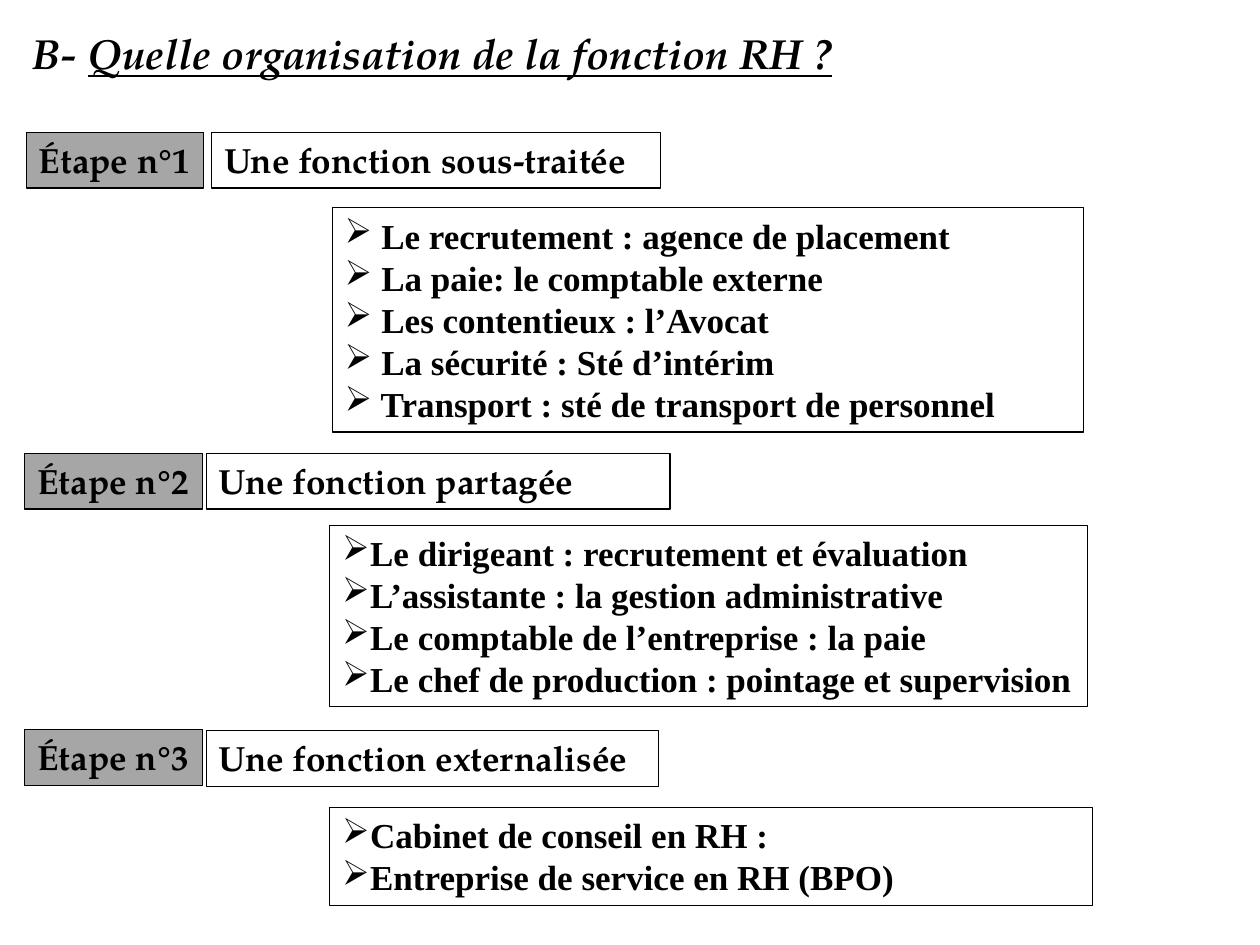
from dataclasses import dataclass

import pptx
import pptx.dml.color
import pptx.enum.shapes
import pptx.enum.text
import pptx.oxml.ns
import pptx.util
from lxml import etree
from pptx.util import Cm


@dataclass(frozen=True)
class Theme:
    ink: str = "000000"
    paper: str = "FFFFFF"
    label: str = "A6A6A6"
    heading_font: str = "TeX Gyre Pagella"
    body_font: str = "Times New Roman"
    title_size: int = 24
    text_size: int = 20
    line_width: float = 0.75


THEME = Theme()
HEADING_HEIGHT = Cm(1.12)
LABEL_WIDTH = Cm(3.58)

STEPS = [
    {
        "label": ("Étape n°1", Cm(0.53), Cm(2.67)),
        "heading": ("Une fonction sous-traitée", Cm(4.27), Cm(2.67), Cm(9.04)),
        "box": (Cm(6.7), Cm(4.19), Cm(15.14), Cm(4.52)),
        "items": [
            " Le recrutement : agence de placement",
            " La paie: le comptable externe",
            " Les contentieux : l’Avocat",
            " La sécurité : Sté d’intérim",
            " Transport : sté de transport de personnel",
        ],
    },
    {
        "label": ("Étape n°2", Cm(0.5), Cm(9.14)),
        "heading": ("Une fonction partagée", Cm(4.16), Cm(9.14), Cm(9.35)),
        "box": (Cm(6.65), Cm(10.59), Cm(15.28), Cm(3.66)),
        "items": [
            "Le dirigeant : recrutement et évaluation",
            "L’assistante : la gestion administrative",
            "Le comptable de l’entreprise : la paie",
            "Le chef de production : pointage et supervision",
        ],
    },
    {
        "label": ("Étape n°3", Cm(0.5), Cm(14.71)),
        "heading": ("Une fonction externalisée", Cm(4.16), Cm(14.73), Cm(9.12)),
        "box": (Cm(6.65), Cm(16.28), Cm(15.37), Cm(1.98)),
        "items": [
            "Cabinet de conseil en RH :",
            "Entreprise de service en RH (BPO)",
        ],
    },
]


def color(value):
    return pptx.dml.color.RGBColor.from_string(value)


def add_run(paragraph, text, font_name, size=THEME.text_size, italic=None, underline=None):
    run = paragraph.add_run()
    run.text = text
    run.font.name = font_name
    run.font.size = pptx.util.Pt(size)
    run.font.bold = True
    run.font.italic = italic
    run.font.underline = underline
    run.font.color.rgb = color(THEME.ink)


def add_bullet(paragraph):
    properties = paragraph._p.get_or_add_pPr()
    properties.set("marL", "0")
    properties.set("indent", "0")
    bullet = etree.SubElement(properties, pptx.oxml.ns.qn("a:buChar"))
    bullet.set("char", "➢")


def add_title(slide):
    text_box = slide.shapes.add_textbox(Cm(0.41), Cm(0.43), Cm(24), Cm(1.3))
    text_box.text_frame.word_wrap = True
    paragraph = text_box.text_frame.paragraphs[0]
    properties = paragraph._p.get_or_add_pPr()
    properties.set("marL", str(Cm(0.97)))
    properties.set("indent", str(Cm(-0.97)))
    add_run(paragraph, "B- ", THEME.heading_font, THEME.title_size, italic=True)
    add_run(paragraph, "Quelle organisation de la fonction RH ?",
            THEME.heading_font, THEME.title_size, italic=True, underline=True)


def add_box(slide, left, top, width, height, lines, font_name,
            fill=None, wrap=True, bulleted=False):
    shape = slide.shapes.add_shape(
        pptx.enum.shapes.MSO_SHAPE.RECTANGLE, left, top, width, height)
    shape.shadow.inherit = False
    if fill:
        shape.fill.solid()
        shape.fill.fore_color.rgb = color(fill)
    else:
        shape.fill.background()
    shape.line.color.rgb = color(THEME.ink)
    shape.line.width = pptx.util.Pt(THEME.line_width)
    frame = shape.text_frame
    frame.word_wrap = wrap
    frame.vertical_anchor = pptx.enum.text.MSO_ANCHOR.TOP
    for index, line in enumerate(lines):
        paragraph = frame.add_paragraph() if index else frame.paragraphs[0]
        paragraph.alignment = pptx.enum.text.PP_ALIGN.LEFT
        if bulleted:
            add_bullet(paragraph)
        add_run(paragraph, line, font_name)


def add_step(slide, step):
    text, left, top = step["label"]
    add_box(slide, left, top, LABEL_WIDTH, HEADING_HEIGHT, [text],
            THEME.heading_font, fill=THEME.label, wrap=False)
    text, left, top, width = step["heading"]
    add_box(slide, left, top, width, HEADING_HEIGHT, [text], THEME.heading_font)
    add_box(slide, *step["box"], step["items"], THEME.body_font,
            fill=THEME.paper, bulleted=True)


def main():
    presentation = pptx.Presentation()
    presentation.slide_width = Cm(25.4)
    presentation.slide_height = Cm(19.05)
    slide = presentation.slides.add_slide(presentation.slide_layouts[6])
    add_title(slide)
    for step in STEPS:
        add_step(slide, step)
    presentation.save("out.pptx")


if __name__ == "__main__":
    main()
